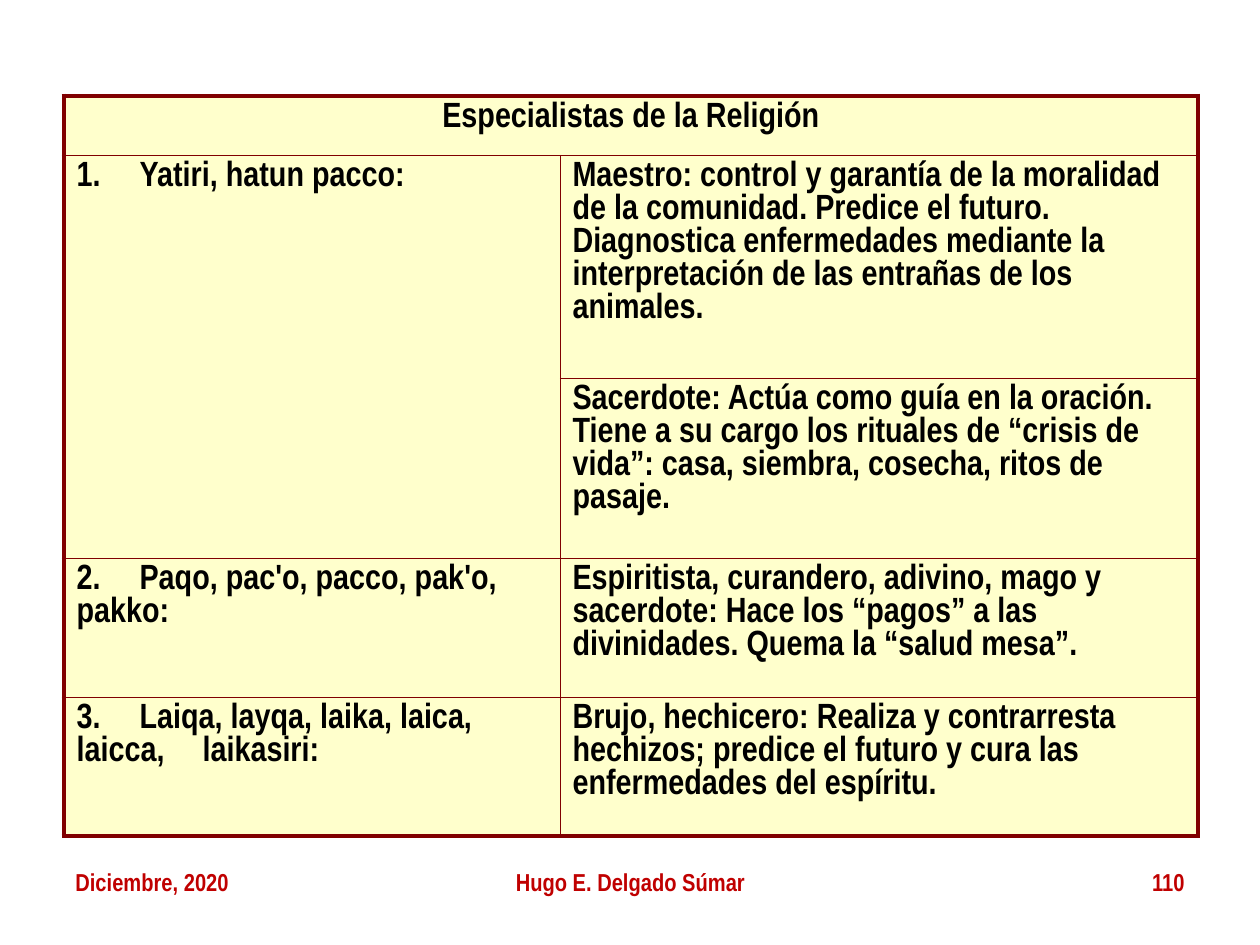
import pptx
import pptx.util
import pptx.dml.color
import pptx.enum.text
import pptx.oxml

PX = 914400 // 126
MAROON = pptx.dml.color.RGBColor(0x80, 0x00, 0x00)
CREAM = pptx.dml.color.RGBColor(0xFF, 0xFF, 0xCC)
BLACK = pptx.dml.color.RGBColor(0x00, 0x00, 0x00)
RED = pptx.dml.color.RGBColor(0xC0, 0x00, 0x00)
ALIGN = pptx.enum.text.PP_ALIGN
NS = "http://schemas.openxmlformats.org/drawingml/2006/main"


def write(frame, text, size, color, align):
    frame.text = text
    frame.word_wrap = True
    par = frame.paragraphs[0]
    par.alignment = align
    for run in par.runs:
        run.font.name = "Arial Narrow"
        run.font.size = pptx.util.Pt(size)
        run.font.bold = True
        run.font.color.rgb = color


def edge(cell, side, outer):
    width = pptx.util.Pt(3 if outer else 0.25)
    cell._tc.get_or_add_tcPr().append(pptx.oxml.parse_xml(
        f'<a:ln{side} xmlns:a="{NS}" w="{width}"><a:solidFill>'
        f'<a:srgbClr val="{MAROON}"/></a:solidFill></a:ln{side}>'))


deck = pptx.Presentation()
deck.slide_width = pptx.util.Inches(10)
deck.slide_height = pptx.util.Inches(7.5)
slide = deck.slides.add_slide(deck.slide_layouts[6])

widths = [496, 638]
heights = [59, 223, 180, 139, 139]
rows = [
    ["Especialistas de la Religión", ""],
    ["1. \tYatiri, hatun pacco:",
     "Maestro: control y garantía de la moralidad de la comunidad. Predice el futuro. "
     "Diagnostica enfermedades mediante la interpretación de las entrañas de los animales."],
    ["",
     "Sacerdote: Actúa como guía en la oración. Tiene a su cargo los rituales de "
     "“crisis de vida”: casa, siembra, cosecha, ritos de pasaje."],
    ["2. \tPaqo, pac'o, pacco, pak'o, pakko:",
     "Espiritista, curandero, adivino, mago y sacerdote: Hace los “pagos” a las "
     "divinidades. Quema la “salud mesa”."],
    ["3. \tLaiqa, layqa, laika, laica, laicca, \tlaikasiri:",
     "Brujo, hechicero: Realiza y contrarresta hechizos; predice el futuro y cura las "
     "enfermedades del espíritu."],
]

table = slide.shapes.add_table(
    len(rows), 2, 64 * PX, 96 * PX, sum(widths) * PX, sum(heights) * PX).table
table.first_row = False
table.horz_banding = False
for col, width in zip(table.columns, widths):
    col.width = width * PX
for row, height in zip(table.rows, heights):
    row.height = height * PX
table.cell(0, 0).merge(table.cell(0, 1))
table.cell(1, 0).merge(table.cell(2, 0))

last = len(rows) - 1
for r, row in enumerate(rows):
    for c, text in enumerate(row):
        cell = table.cell(r, c)
        edge(cell, "L", c == 0)
        edge(cell, "R", c == 1 or r == 0)
        edge(cell, "T", r == 0)
        edge(cell, "B", r == last)
        cell.fill.solid()
        cell.fill.fore_color.rgb = CREAM
        if text:
            align = ALIGN.LEFT if r else ALIGN.CENTER
            write(cell.text_frame, text, 20, BLACK, align)

footer = [
    (63, 294, "Diciembre, 2020", ALIGN.LEFT),
    (431, 399, "Hugo E. Delgado Súmar", ALIGN.CENTER),
    (903, 294, "110", ALIGN.RIGHT),
]
for left, width, text, align in footer:
    box = slide.shapes.add_textbox(left * PX, 861 * PX, width * PX, 66 * PX)
    write(box.text_frame, text, 14, RED, align)

deck.save("out.pptx")
